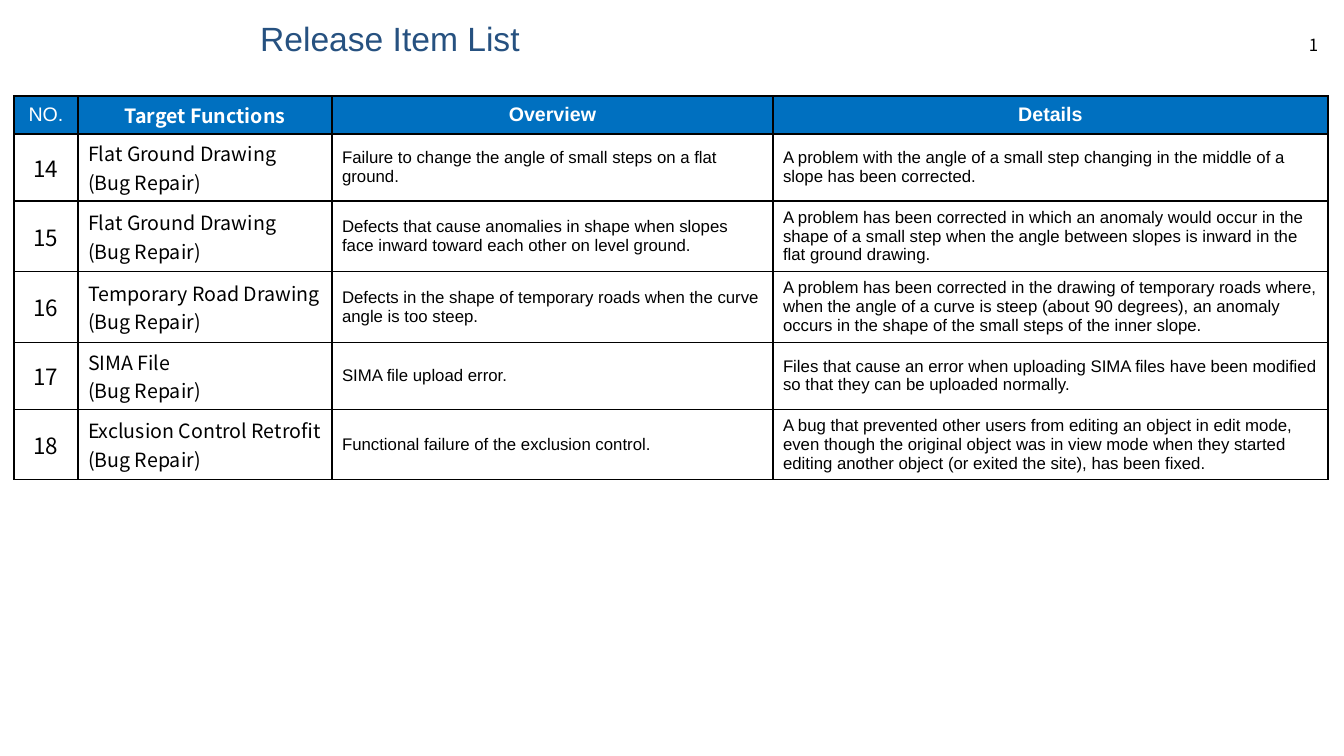
import pptx
import pptx.enum.text
import pptx.dml.color
import pptx.oxml
import pptx.oxml.ns
import pptx.util

COLORS = {"title": "265180", "header": "0070C0", "white": "FFFFFF", "black": "000000"}
SANS, JAPANESE = "Arial", "Noto Sans CJK JP"
ALIGN = pptx.enum.text.PP_ALIGN
MIDDLE = pptx.enum.text.MSO_ANCHOR.MIDDLE

COLUMN_WIDTHS = [64, 254, 441, 555]
HEADER_HEIGHT, ROW_HEIGHT = 38, 67

HEADERS = ["NO.", "Target Functions", "Overview", "Details"]
HEADER_FORMATS = [
    {"name": name, "size": 14, "bold": bold, "color": "white", "alignment": ALIGN.CENTER}
    for name, bold in [(SANS, False), (JAPANESE, True), (SANS, True), (SANS, True)]
]
BODY_FORMATS = [
    {"name": name, "size": size, "bold": False, "color": "black", "alignment": alignment}
    for name, size, alignment in [
        (JAPANESE, 16, ALIGN.CENTER),
        (JAPANESE, 14, ALIGN.LEFT),
        (SANS, 12, ALIGN.LEFT),
        (SANS, 12, ALIGN.LEFT),
    ]
]
FIRST_NUMBER = 14
ITEMS = [
    ("Flat Ground Drawing",
     "Failure to change the angle of small steps on a flat ground.",
     "A problem with the angle of a small step changing in the middle of a slope "
     "has been corrected."),
    ("Flat Ground Drawing",
     "Defects that cause anomalies in shape when slopes face inward toward each other "
     "on level ground.",
     "A problem has been corrected in which an anomaly would occur in the shape of a small "
     "step when the angle between slopes is inward in the flat ground drawing."),
    ("Temporary Road Drawing",
     "Defects in the shape of temporary roads when the curve angle is too steep.",
     "A problem has been corrected in the drawing of temporary roads where, when the angle "
     "of a curve is steep (about 90 degrees), an anomaly occurs in the shape of the small "
     "steps of the inner slope."),
    ("SIMA File",
     "SIMA file upload error.",
     "Files that cause an error when uploading SIMA files have been modified so that they "
     "can be uploaded normally."),
    ("Exclusion Control Retrofit",
     "Functional failure of the exclusion control.",
     "A bug that prevented other users from editing an object in edit mode, even though the "
     "original object was in view mode when they started editing another object (or exited "
     "the site), has been fixed."),
]


def px(length):
    return pptx.util.Emu(round(length * 914400 / 100.8))


def rgb(color):
    return pptx.dml.color.RGBColor.from_string(COLORS[color])


class ReleaseSlide:
    def __init__(self, presentation):
        self.slide = presentation.slides.add_slide(presentation.slide_layouts[5])

    def place(self, shape, box):
        for side, length in zip(("left", "top", "width", "height"), box):
            setattr(shape, side, px(length))

    def format_paragraph(self, paragraph, values):
        paragraph.alignment = values["alignment"]
        settings = {"name": values["name"], "size": pptx.util.Pt(values["size"]),
                    "bold": values["bold"]}
        for font in [paragraph.font] + [run.font for run in paragraph.runs]:
            for attribute, value in settings.items():
                setattr(font, attribute, value)
            font.color.rgb = rgb(values["color"])

    def title(self, text, box, values):
        shape = self.slide.shapes.title
        self.place(shape, box)
        frame = shape.text_frame
        frame.text = text
        frame.auto_size = pptx.enum.text.MSO_AUTO_SIZE.NONE
        frame.vertical_anchor = MIDDLE
        frame.paragraphs[0].line_spacing = 0.9
        self.format_paragraph(frame.paragraphs[0], values)

    def page_number(self, number, box, values):
        """Add a text box whose text is a slide number field."""
        frame = self.slide.shapes.add_textbox(*map(px, box)).text_frame
        frame.word_wrap = True
        paragraph = frame.paragraphs[0]
        self.format_paragraph(paragraph, values)
        field = pptx.oxml.parse_xml(
            f'<a:fld {pptx.oxml.ns.nsdecls("a")} '
            'id="{B6F15528-21DE-4FAA-801E-634DDDAF4B2B}" type="slidenum">'
            f'<a:rPr lang="en-US" sz="{values["size"] * 100}"><a:solidFill>'
            f'<a:srgbClr val="{COLORS[values["color"]]}"/></a:solidFill>'
            f'<a:latin typeface="{values["name"]}"/></a:rPr><a:t>{number}</a:t></a:fld>')
        paragraph._p.get_or_add_pPr().addnext(field)

    def cell(self, cell, text, fill, values):
        cell.text = text
        cell.vertical_anchor = MIDDLE
        cell.fill.solid()
        cell.fill.fore_color.rgb = rgb(fill)
        for paragraph in cell.text_frame.paragraphs:
            self.format_paragraph(paragraph, values)
        properties = cell._tc.get_or_add_tcPr()
        for index, edge in enumerate("LRTB"):
            properties.insert(index, pptx.oxml.parse_xml(
                f'<a:ln{edge} {pptx.oxml.ns.nsdecls("a")} w="12700"><a:solidFill>'
                f'<a:srgbClr val="{COLORS["black"]}"/></a:solidFill></a:ln{edge}>'))

    def table(self, left, top, rows):
        heights = [HEADER_HEIGHT] + [ROW_HEIGHT] * (len(rows) - 1)
        box = (left, top, sum(COLUMN_WIDTHS), sum(heights))
        table = self.slide.shapes.add_table(
            len(rows), len(COLUMN_WIDTHS), *map(px, box)).table
        for column, width in zip(table.columns, COLUMN_WIDTHS):
            column.width = px(width)
        for row, height in zip(table.rows, heights):
            row.height = px(height)
        for row_index, texts in enumerate(rows):
            formats = BODY_FORMATS if row_index else HEADER_FORMATS
            fill = "white" if row_index else "header"
            for column_index, (text, values) in enumerate(zip(texts, formats)):
                self.cell(table.cell(row_index, column_index), text, fill, values)


def main():
    presentation = pptx.Presentation()
    presentation.slide_width, presentation.slide_height = px(1344), px(756)
    release = ReleaseSlide(presentation)
    release.page_number(3, (1258, 30, 70, 30), {
        "name": JAPANESE, "size": 12, "bold": False, "color": "black",
        "alignment": ALIGN.RIGHT})
    release.title("Release Item List", (250, 20, 899, 42), {
        "name": SANS, "size": 24, "bold": False, "color": "title",
        "alignment": ALIGN.LEFT})
    rows = [HEADERS] + [
        [str(number), f"{function}\n(Bug Repair)", overview, details]
        for number, (function, overview, details) in enumerate(ITEMS, FIRST_NUMBER)]
    release.table(14, 96, rows)
    presentation.save("out.pptx")


if __name__ == "__main__":
    main()
